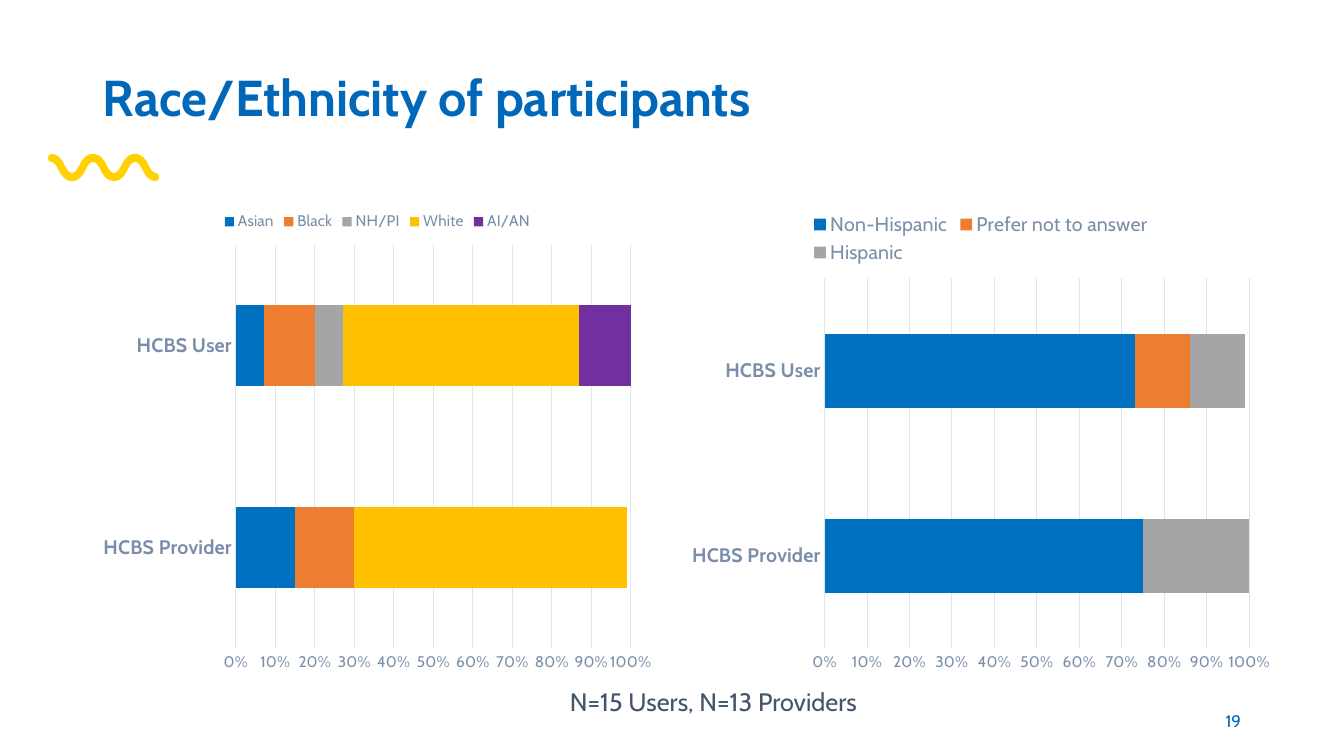
from lxml import etree
from pptx import Presentation
from pptx.chart.data import CategoryChartData
from pptx.dml.color import RGBColor
from pptx.enum.chart import XL_CHART_TYPE, XL_LEGEND_POSITION, XL_TICK_MARK
from pptx.enum.text import MSO_ANCHOR, PP_ALIGN
from pptx.oxml.ns import qn
from pptx.util import Emu, Pt

COLORS = {
    "title": "0067B9", "text": "44546A", "label": "7A8EAA", "grid": "E0E5EB",
    "squiggle": "FFD100", "blue": "0070C0", "orange": "ED7D31",
    "gray": "A5A5A5", "gold": "FFC000", "purple": "7030A0",
}
CATEGORIES = ["HCBS Provider", "HCBS User"]
RACE = [
    ("Asian", (0.15, 0.07), "blue"),
    ("Black", (0.15, 0.13), "orange"),
    ("NH/PI", (0, 0.07), "gray"),
    ("White", (0.69, 0.6), "gold"),
    ("AI/AN", (0, 0.13), "purple"),
]
ETHNICITY = [
    ("Non-Hispanic", (0.75, 0.73), "blue"),
    ("Prefer not to answer", (0, 0.13), "orange"),
    ("Hispanic", (0.25, 0.13), "gray"),
]

# Squiggle: lower edge of one half wave, trough to crest, as two Bezier curves
HALF_WAVE = [(0, 181), (8, 181), (11, 175), (14, 169),
             (16, 165), (18, 162), (21, 162)]
ROUND_END = [(49, 162), (48, 160), (48, 158), (48, 156), (49, 154), (51, 154)]


def squiggle_points():
    points = [(156, 181)]
    for i in range(5):
        start = 156 - 21 * i
        if i % 2:
            points += [(start - 21 + dx, y) for dx, y in HALF_WAVE[-2::-1]]
        else:
            points += [(start - dx, y) for dx, y in HALF_WAVE[1:]]
    points += ROUND_END
    # The upper edge is the lower one turned half way round
    return points + [(207 - x, 335 - y) for x, y in points[1:]]


def rgb(name):
    return RGBColor.from_string(COLORS[name])


def apply(target, **values):
    for name, value in values.items():
        setattr(target, name, value)


class SlideBuilder:
    FONT = "Cabin"
    PX = 914400 / 100.8

    def __init__(self, prs, width, height):
        apply(prs, slide_width=self.emu(width), slide_height=self.emu(height))
        self.s = prs.slides.add_slide(prs.slide_layouts[6])

    def emu(self, px):
        return Emu(round(px * self.PX))

    def box(self, *px):
        return [self.emu(v) for v in px]

    def font(self, font, size, color, bold=False):
        apply(font, name=self.FONT, size=Pt(size), bold=bold)
        font.color.rgb = rgb(color)

    def text(self, at, text, size, color, bold=False,
             anchor=MSO_ANCHOR.TOP, **paragraph):
        tf = self.s.shapes.add_textbox(*self.box(*at)).text_frame
        apply(tf, word_wrap=True, vertical_anchor=anchor)
        p = tf.paragraphs[0]
        apply(p, **paragraph)
        r = p.add_run()
        r.text = text
        self.font(r.font, size, color, bold)

    def curve(self, points, color):
        builder = self.s.shapes.build_freeform(*points[0], scale=self.PX)
        builder.add_line_segments(points[1:])
        sp = builder.convert_to_shape()
        # Join each three line ends into one Bezier curve
        lines = list(sp.element.iter(qn("a:lnTo")))
        for i in range(0, len(lines) - 2, 3):
            bezier = etree.Element(qn("a:cubicBezTo"))
            lines[i].addprevious(bezier)
            for line in lines[i:i + 3]:
                bezier.append(line[0])
                line.getparent().remove(line)
        for line in sp.element.findall(".//" + qn("a:lnTo")):
            line.getparent().remove(line)
        sp.shadow.inherit = False
        sp.fill.solid()
        sp.fill.fore_color.rgb = rgb(color)
        sp.line.fill.background()

    def line(self, line, color):
        line.color.rgb = rgb(color)
        line.width = Pt(0.75)

    def stacked_bars(self, at, series, legend_size):
        data = CategoryChartData(number_format="0%")
        data.categories = CATEGORIES
        for name, values, _ in series:
            data.add_series(name, values)
        chart = self.s.shapes.add_chart(
            XL_CHART_TYPE.BAR_STACKED, *self.box(*at), data).chart
        self.font(chart.font, 10, "text")
        apply(chart, has_title=False, has_legend=True)

        # Legend
        apply(chart.legend, position=XL_LEGEND_POSITION.TOP,
              include_in_layout=False)
        self.font(chart.legend.font, legend_size, "label")

        # Bars
        plot = chart.plots[0]
        apply(plot, gap_width=150, overlap=100, vary_by_categories=False)
        for bar, (_, _, color) in zip(plot.series, series):
            bar.format.fill.solid()
            bar.format.fill.fore_color.rgb = rgb(color)

        # Axes
        cat, val = chart.category_axis, chart.value_axis
        for axis, size, bold in ((cat, 14, True), (val, 11, False)):
            apply(axis, major_tick_mark=XL_TICK_MARK.NONE,
                  minor_tick_mark=XL_TICK_MARK.NONE)
            self.font(axis.tick_labels.font, size, "label", bold)
        self.line(cat.format.line, "grid")
        apply(val, maximum_scale=1, major_unit=0.1, has_major_gridlines=True)
        apply(val.tick_labels, number_format="0%",
              number_format_is_linked=False)
        val.format.line.fill.background()
        self.line(val.major_gridlines.format.line, "grid")


def main():
    prs = Presentation()
    slide = SlideBuilder(prs, 1344, 756)

    # Heading
    slide.curve(squiggle_points(), "squiggle")
    slide.text((93, 40, 1159, 92), "Race/Ethnicity of participants", 36,
               "title", bold=True, anchor=MSO_ANCHOR.BOTTOM, line_spacing=0.9)

    # Charts
    slide.stacked_bars((92, 201, 571, 480), RACE, 11)
    slide.stacked_bars((680, 201, 602, 480), ETHNICITY, 14)

    # Sample size and page number
    slide.text((560, 681, 526, 40), "N=15 Users, N=13 Providers", 18, "text")
    slide.text((949, 701, 302, 40), "19", 12, "title",
               anchor=MSO_ANCHOR.MIDDLE, alignment=PP_ALIGN.RIGHT)

    prs.save("out.pptx")


if __name__ == "__main__":
    main()
